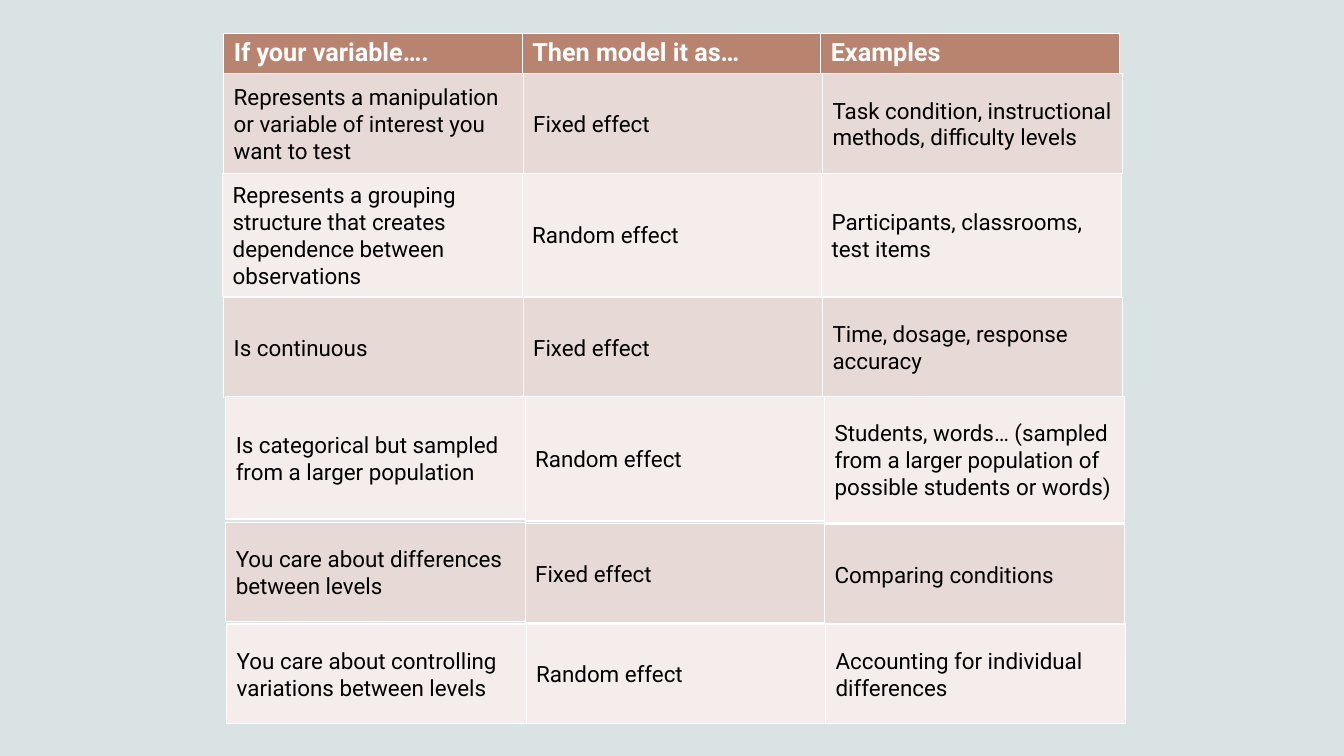
"""Build a slide showing when to model a variable as a fixed or a random effect."""
from dataclasses import dataclass

from lxml.etree import SubElement
from pptx import Presentation
from pptx.dml.color import RGBColor
from pptx.enum.shapes import MSO_SHAPE
from pptx.enum.text import MSO_ANCHOR, PP_ALIGN
from pptx.oxml.ns import qn
from pptx.util import Inches, Pt


@dataclass(frozen=True)
class Theme:
    font: str = "Roboto"
    background: str = "DAE3E3"
    header: str = "B88470"
    fixed: str = "E7DAD6"
    random: str = "F4EDEB"
    text: str = "000000"
    white: str = "FFFFFF"
    header_size: int = 18
    body_size: int = 16
    outline: float = 0.85


THEME = Theme()
COLUMN_WIDTH = 2.97
HEADINGS = ["If your variable….", "Then model it as…", "Examples"]
BORDERS = [("a:lnL", 1), ("a:lnR", 1), ("a:lnT", 1), ("a:lnB", 3)]

# left, top, height, drop per column, growth per column, condition, effect, examples
CRITERIA = [
    (2.22, 0.73, 0.99, 0, 0, "Represents a manipulation or variable of interest you want to test",
     "Fixed effect", "Task condition, instructional methods, difficulty levels"),
    (2.21, 1.72, 1.22, 0, 0,
     "Represents a grouping structure that creates dependence between observations",
     "Random effect", "Participants, classrooms, test items"),
    (2.22, 2.95, 0.99, 0, 0, "Is continuous",
     "Fixed effect", "Time, dosage, response accuracy"),
    (2.24, 3.93, 1.22, 0, 0.02, "Is categorical but sampled from a larger population",
     "Random effect",
     "Students, words… (sampled from a larger population of possible students or words)"),
    (2.24, 5.18, 0.99, 0.01, 0, "You care about differences between levels",
     "Fixed effect", "Comparing conditions"),
    (2.25, 6.19, 0.99, 0, 0, "You care about controlling variations between levels",
     "Random effect", "Accounting for individual differences"),
]


def write(text_frame, wording, size, color, bold=False):
    text_frame.text = wording
    paragraph = text_frame.paragraphs[0]
    paragraph.alignment = PP_ALIGN.LEFT
    font = paragraph.runs[0].font
    font.name = THEME.font
    font.size = Pt(size)
    font.bold = bold
    font.color.rgb = RGBColor.from_string(color)


presentation = Presentation()
presentation.slide_width = Inches(13.33)
presentation.slide_height = Inches(7.5)
slide = presentation.slides.add_slide(presentation.slide_layouts[6])
slide.background.fill.solid()
slide.background.fill.fore_color.rgb = RGBColor.from_string(THEME.background)

headings = slide.shapes.add_table(
    1, len(HEADINGS), Inches(2.22), Inches(0.33), Inches(8.89), Inches(0.41)).table
for column, heading in enumerate(HEADINGS):
    headings.columns[column].width = Inches(2.96)
    cell = headings.cell(0, column)
    write(cell.text_frame, heading, THEME.header_size, THEME.white, bold=True)
    properties = cell._tc.get_or_add_tcPr()
    for side, width in BORDERS:
        border = SubElement(properties, qn(side), w=str(Pt(width)))
        border_fill = SubElement(border, qn("a:solidFill"))
        SubElement(border_fill, qn("a:srgbClr"), val=THEME.white)
    cell.fill.solid()
    cell.fill.fore_color.rgb = RGBColor.from_string(THEME.header)

for left, top, height, drop, growth, *wordings in CRITERIA:
    row_color = THEME.fixed if "Fixed effect" in wordings else THEME.random
    for column, wording in enumerate(wordings):
        entry = slide.shapes.add_shape(
            MSO_SHAPE.RECTANGLE,
            Inches(left + column * COLUMN_WIDTH), Inches(top + column * drop),
            Inches(COLUMN_WIDTH), Inches(height + column * growth))
        entry.shadow.inherit = False
        entry.fill.solid()
        entry.fill.fore_color.rgb = RGBColor.from_string(row_color)
        entry.line.color.rgb = RGBColor.from_string(THEME.white)
        entry.line.width = Pt(THEME.outline)
        entry.text_frame.word_wrap = True
        entry.text_frame.vertical_anchor = MSO_ANCHOR.MIDDLE
        write(entry.text_frame, wording, THEME.body_size, THEME.text)

presentation.save("out.pptx")
